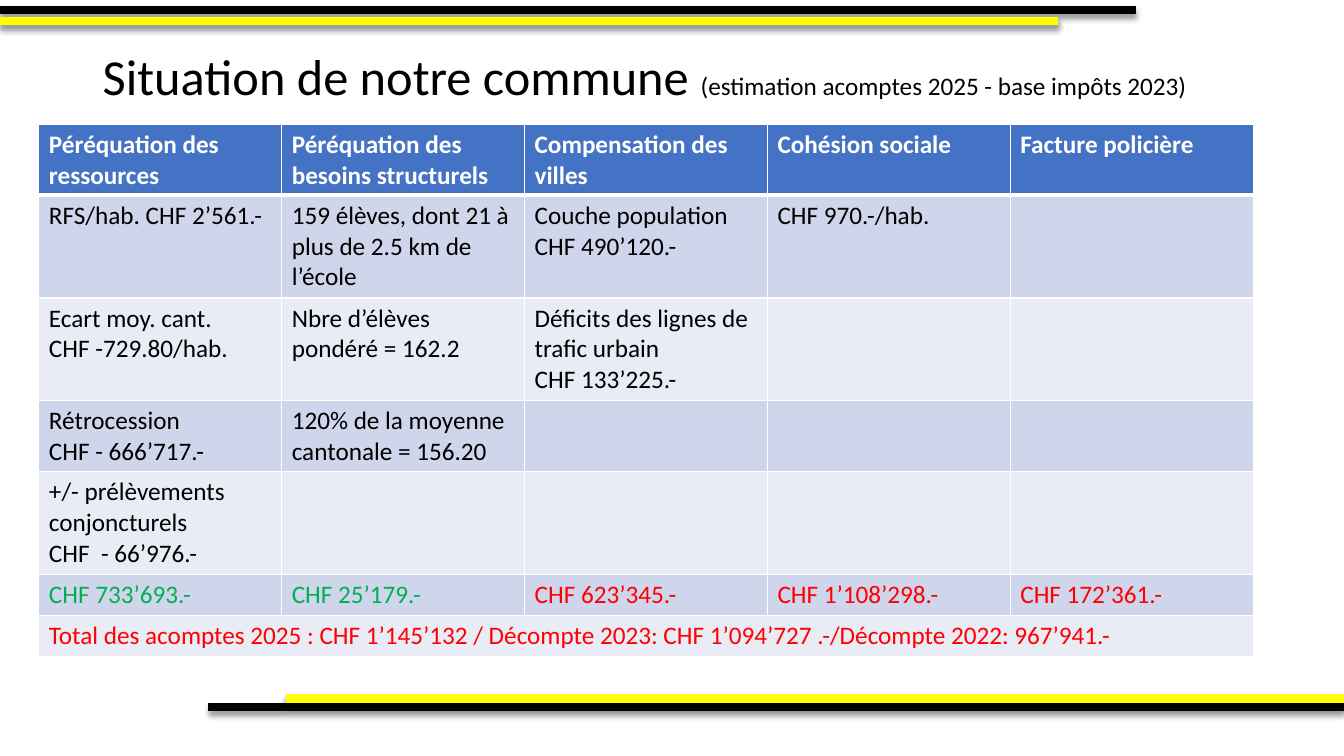
from lxml import etree
from pptx import Presentation
from pptx.dml.color import RGBColor
from pptx.enum.shapes import MSO_CONNECTOR
from pptx.enum.text import MSO_ANCHOR
from pptx.oxml import parse_xml
from pptx.oxml.ns import nsdecls, qn
from pptx.util import Cm, Pt

FONT = "Calibri"
BLACK, WHITE, YELLOW = "000000", "FFFFFF", "FFFF00"
GREEN, RED = "00B050", "FF0000"
HEADER_FILL, BAND_FILLS = "4472C4", ("CFD5EA", "E9EBF5")

BANDS = [
    (5.24, 33.87, 17.81, BLACK),
    (7.2, 33.87, 17.6, YELLOW),
    (0, 28.63, 0.25, BLACK),
    (0, 26.67, 0.53, YELLOW),
]
ROW_HEIGHTS = [1.79, 2.59, 2.59, 1.79, 2.59, 1.03, 1.03]
COLUMN_WIDTH = 6.12
HEADINGS = [
    "Péréquation des ressources",
    "Péréquation des besoins structurels",
    "Compensation des villes",
    "Cohésion sociale",
    "Facture policière",
]
DETAILS = [
    ["RFS/hab. CHF 2’561.-", "159 élèves, dont 21 à plus de 2.5 km de l’école",
     "Couche population CHF 490’120.-", "CHF 970.-/hab.", ""],
    ["Ecart moy. cant.\nCHF -729.80/hab.", "Nbre d’élèves pondéré = 162.2",
     "Déficits des lignes de trafic urbain\nCHF 133’225.-", "", ""],
    ["Rétrocession\nCHF - 666’717.-", "120% de la moyenne\ncantonale = 156.20", "", "", ""],
    ["+/- prélèvements conjoncturels\nCHF  - 66’976.-", "", "", "", ""],
]
AMOUNTS = ["CHF 733’693.-", "CHF 25’179.-", "CHF 623’345.-", "CHF 1’108’298.-", "CHF 172’361.-"]
AMOUNT_COLOURS = [GREEN, GREEN, RED, RED, RED]
TOTAL = ("Total des acomptes 2025 : CHF 1’145’132 / Décompte 2023: "
         "CHF 1’094’727 .-/Décompte 2022: 967’941.-")


def colour(value):
    """Turn a hex string into a colour."""
    return RGBColor.from_string(value)


def style_font(font, size, ink, bold=False):
    """Set the face, size, colour and weight of a font."""
    font.name = FONT
    font.size = Pt(size)
    font.bold = bold
    font.color.rgb = colour(ink)


def add_band(slide, left, right, top, ink):
    """Draw a thick horizontal rule with a soft shadow beneath."""
    band = slide.shapes.add_connector(
        MSO_CONNECTOR.STRAIGHT, Cm(left), Cm(top), Cm(right), Cm(top))
    band.line.color.rgb = colour(ink)
    band.line.width = Pt(6)
    properties = band.element.find(qn("p:spPr"))
    properties.append(parse_xml(
        f'<a:effectLst {nsdecls("a")}><a:outerShdw blurRad="{Pt(4)}" dist="{Pt(3)}" '
        f'dir="5400000" rotWithShape="0"><a:srgbClr val="{BLACK}"><a:alpha val="40000"/>'
        '</a:srgbClr></a:outerShdw></a:effectLst>'))


def add_title(slide):
    """Write the title and its smaller qualifier on one line."""
    frame = slide.shapes.add_textbox(Cm(2.34), Cm(1.02), Cm(29.21), Cm(1.96)).text_frame
    frame.word_wrap = True
    frame.vertical_anchor = MSO_ANCHOR.MIDDLE
    heading = frame.paragraphs[0]
    heading.line_spacing = 0.9
    for text, size in [("Situation de notre commune ", 36),
                       ("(estimation acomptes 2025 - base impôts 2023)", 18)]:
        run = heading.add_run()
        run.text = text
        style_font(run.font, size, BLACK)


def add_borders(cell, bottom_width):
    """Outline a cell in white, with its own bottom width."""
    properties = cell._tc.get_or_add_tcPr()
    for side, width in zip("LRTB", (1, 1, 1, bottom_width)):
        border = etree.SubElement(properties, qn(f"a:ln{side}"), w=str(Pt(width)))
        fill = etree.SubElement(border, qn("a:solidFill"))
        etree.SubElement(fill, qn("a:srgbClr"), val=WHITE)


def fill_cell(cell, text, fill, ink=BLACK, bold=False, bottom_width=1):
    """Write and format one table cell."""
    add_borders(cell, bottom_width)
    cell.fill.solid()
    cell.fill.fore_color.rgb = colour(fill)
    cell.text = text
    for paragraph in cell.text_frame.paragraphs:
        style_font(paragraph.font, 18, ink, bold)


def add_accounts_table(slide):
    """Build the table of contributions by category."""
    rows, columns = len(ROW_HEIGHTS), len(HEADINGS)
    table = slide.shapes.add_table(
        rows, columns, Cm(0.98), Cm(3.13),
        Cm(COLUMN_WIDTH * columns), Cm(sum(ROW_HEIGHTS))).table
    for column in table.columns:
        column.width = Cm(COLUMN_WIDTH)
    for row, height in zip(table.rows, ROW_HEIGHTS):
        row.height = Cm(height)
    for index, heading in enumerate(HEADINGS):
        fill_cell(table.cell(0, index), heading, HEADER_FILL, WHITE, True, 3)
    for row, texts in enumerate(DETAILS + [AMOUNTS], 1):
        inks = AMOUNT_COLOURS if texts is AMOUNTS else [BLACK] * columns
        for index, (text, ink) in enumerate(zip(texts, inks)):
            fill_cell(table.cell(row, index), text, BAND_FILLS[(row - 1) % 2], ink)
    total = table.cell(rows - 1, 0)
    total.merge(table.cell(rows - 1, columns - 1))
    fill_cell(total, TOTAL, BAND_FILLS[1], RED)


def main():
    """Build the slide and save it."""
    deck = Presentation()
    deck.slide_width, deck.slide_height = Cm(33.87), Cm(19.05)
    slide = deck.slides.add_slide(deck.slide_layouts[6])
    for band in BANDS:
        add_band(slide, *band)
    add_title(slide)
    add_accounts_table(slide)
    deck.save("out.pptx")


if __name__ == "__main__":
    main()
